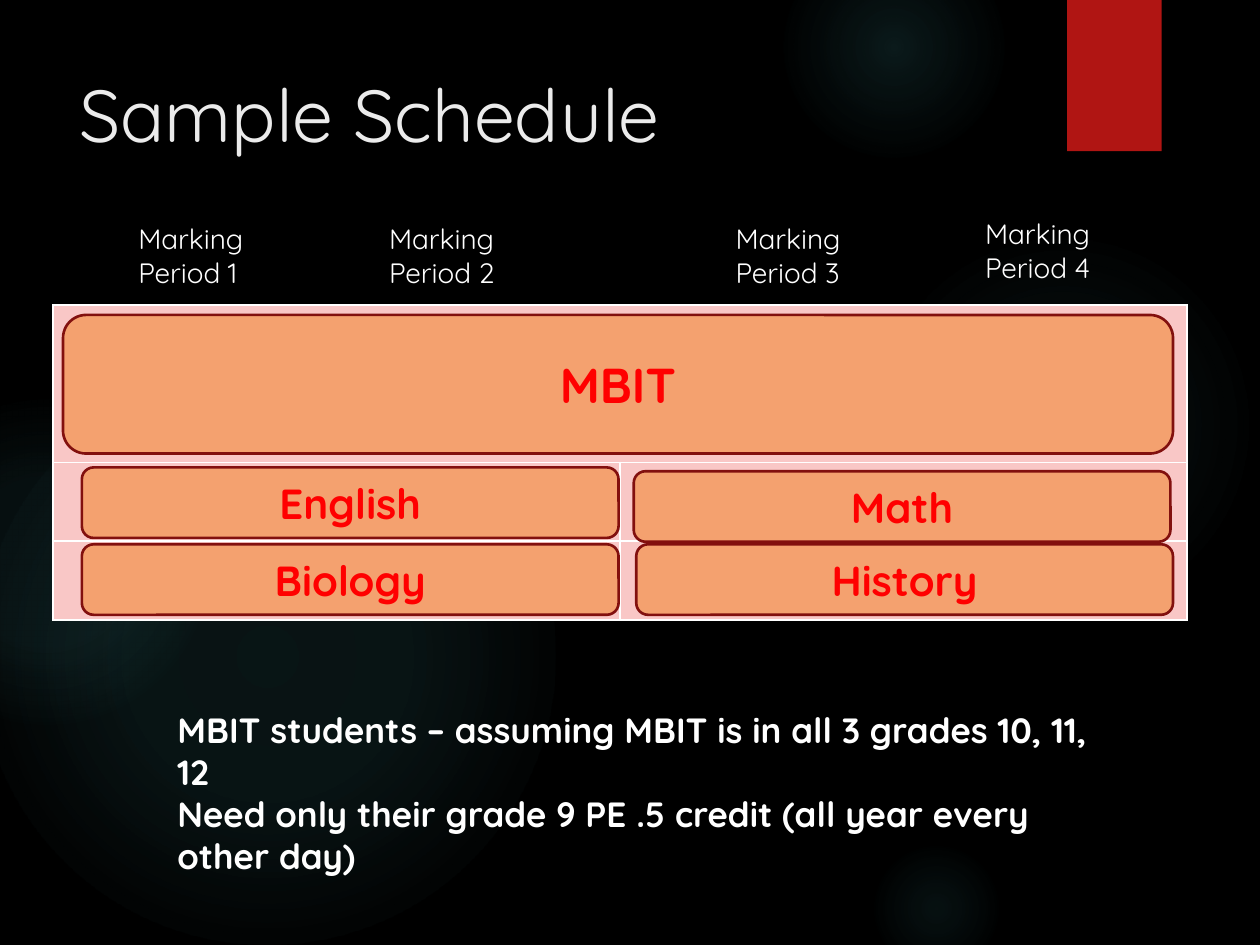
from dataclasses import dataclass

from lxml import etree
from pptx import Presentation
from pptx.dml.color import RGBColor
from pptx.enum.shapes import MSO_SHAPE
from pptx.enum.text import MSO_ANCHOR, MSO_AUTO_SIZE, PP_ALIGN
from pptx.oxml import parse_xml
from pptx.oxml.ns import nsdecls, qn
from pptx.util import Inches, Pt

OVAL, RECT, ROUND = MSO_SHAPE.OVAL, MSO_SHAPE.RECTANGLE, MSO_SHAPE.ROUNDED_RECTANGLE
LEFT, CENTER = PP_ALIGN.LEFT, PP_ALIGN.CENTER
TOP, MIDDLE = MSO_ANCHOR.TOP, MSO_ANCHOR.MIDDLE
GROW = MSO_AUTO_SIZE.SHAPE_TO_FIT_TEXT


@dataclass(frozen=True)
class Theme:
    font: str = "Quicksand"
    back: str = "000000"
    glow: str = "50B9C1"
    ribbon: str = "B01513"
    title: str = "EBEBEB"
    white: str = "FFFFFF"
    cell: str = "F9C7C6"
    block: str = "F4A16F"
    edge: str = "82100E"
    course: str = "FF0000"
    title_size: int = 42
    main_size: int = 28
    course_size: int = 24
    note_size: int = 20
    label_size: int = 16


def color(code):
    return RGBColor.from_string(code)


def write(frame, text, *, size, ink, font, bold=False, align=LEFT, anchor=TOP):
    frame.word_wrap = True
    frame.vertical_anchor = anchor
    frame.text = text
    for par in frame.paragraphs:
        par.alignment = align
        par.font.size = Pt(size)
        par.font.name = font
        par.font.bold = bold
        par.font.color.rgb = color(ink)


class Board:
    def __init__(self, slide, theme):
        self.slide, self.theme = slide, theme
        fill = slide.background.fill
        fill.solid()
        fill.fore_color.rgb = color(theme.back)

    def shape(self, kind, box, fill=None, line=None):
        item = self.slide.shapes.add_shape(kind, *map(Inches, box))
        item.shadow.inherit = False
        if fill:
            item.fill.solid()
            item.fill.fore_color.rgb = color(fill)
        if line:
            item.line.color.rgb = color(line)
            item.line.width = Pt(1.5)
        else:
            item.line.fill.background()
        return item

    def glow(self, left, top, size, stops):
        """Draw a soft round light; stops are (position, opacity) in percent."""
        item = self.shape(OVAL, (left, top, size, size))
        marks = "".join(
            f'<a:gs pos="{pos * 1000}"><a:srgbClr val="{self.theme.glow}">'
            f'<a:alpha val="{alpha * 1000}"/></a:srgbClr></a:gs>'
            for pos, alpha in stops)
        grad = parse_xml(
            f'<a:gradFill {nsdecls("a")} rotWithShape="1"><a:gsLst>{marks}</a:gsLst>'
            '<a:path path="circle"><a:fillToRect l="50000" t="50000" r="50000" b="50000"/>'
            '</a:path></a:gradFill>')
        item.element.spPr.find(qn("a:prstGeom")).addnext(grad)

    def text(self, box, words, size, ink=None, bold=False, grow=True):
        frame = self.slide.shapes.add_textbox(*map(Inches, box)).text_frame
        write(frame, words, size=size, ink=ink or self.theme.white,
              font=self.theme.font, bold=bold)
        if grow:
            frame.auto_size = GROW

    def course(self, box, name, size):
        item = self.shape(ROUND, box, self.theme.block, self.theme.edge)
        write(item.text_frame, name, size=size, ink=self.theme.course,
              font=self.theme.font, bold=True, align=CENTER, anchor=MIDDLE)

    def grid(self, box, rows, cols):
        table = self.slide.shapes.add_table(
            len(rows), len(cols), *map(Inches, box)).table
        for row, height in zip(table.rows, rows):
            row.height = Inches(height)
        for col, width in zip(table.columns, cols):
            col.width = Inches(width)
        for cell in table.iter_cells():
            cell.fill.solid()
            cell.fill.fore_color.rgb = color(self.theme.cell)
            self.border(cell)
        table.cell(0, 0).merge(table.cell(0, len(cols) - 1))

    def border(self, cell):
        props = cell._tc.get_or_add_tcPr()
        for spot, side in enumerate(("lnL", "lnR", "lnT", "lnB")):
            line = etree.Element(qn(f"a:{side}"), w=str(Pt(1)))
            fill = etree.SubElement(line, qn("a:solidFill"))
            etree.SubElement(fill, qn("a:srgbClr"), val=self.theme.white)
            props.insert(spot, line)


def main():
    deck = Presentation()
    deck.slide_width, deck.slide_height = Inches(10), Inches(7.5)
    theme = Theme()
    board = Board(deck.slides.add_slide(deck.slide_layouts[6]), theme)

    for left, top, size, stops in (
            (6.89, 1.83, 3.08, ((0, 7), (36, 6), (69, 0))),
            (6.22, -0.5, 1.75, ((0, 14), (36, 7), (73, 0))),
            (6.89, 6.67, 1.08, ((0, 9), (36, 5), (66, 0))),
            (-0.17, 2.92, 4.58, ((0, 11), (36, 10), (75, 0))),
            (-0.92, 3.17, 2.58, ((0, 8), (36, 8), (72, 0)))):
        board.glow(left, top, size, stops)
    board.shape(RECT, (8.47, 0, 0.75, 1.2), theme.ribbon)
    board.text((0.53, 0.5, 7.72, 1.53), "Sample Schedule", theme.title_size,
               theme.title, grow=False)

    board.grid((0.42, 2.42, 9, 2.5), (1.25, 0.625, 0.625), (4.5, 4.5))
    board.course((0.5, 2.5, 8.81, 1.1), "MBIT", theme.main_size)
    for left, top, name in ((0.65, 3.71, "English"), (5.03, 3.74, "Math"),
                            (0.65, 4.32, "Biology"), (5.05, 4.32, "History")):
        board.course((left, top, 4.26, 0.56), name, theme.course_size)

    board.text((1.31, 5.57, 7.66, 0.77),
               "MBIT students – assuming MBIT is in all 3 grades 10, 11, 12\n"
               "Need only their grade 9 PE .5 credit (all year every other day)",
               theme.note_size, bold=True)
    spots = ((1, 1.71), (2.99, 1.71), (5.74, 1.71), (7.72, 1.67))
    for number, (left, top) in enumerate(spots, 1):
        board.text((left, top, 1.14, 0.64), f"Marking Period {number}",
                   theme.label_size)

    deck.save("out.pptx")


if __name__ == "__main__":
    main()
